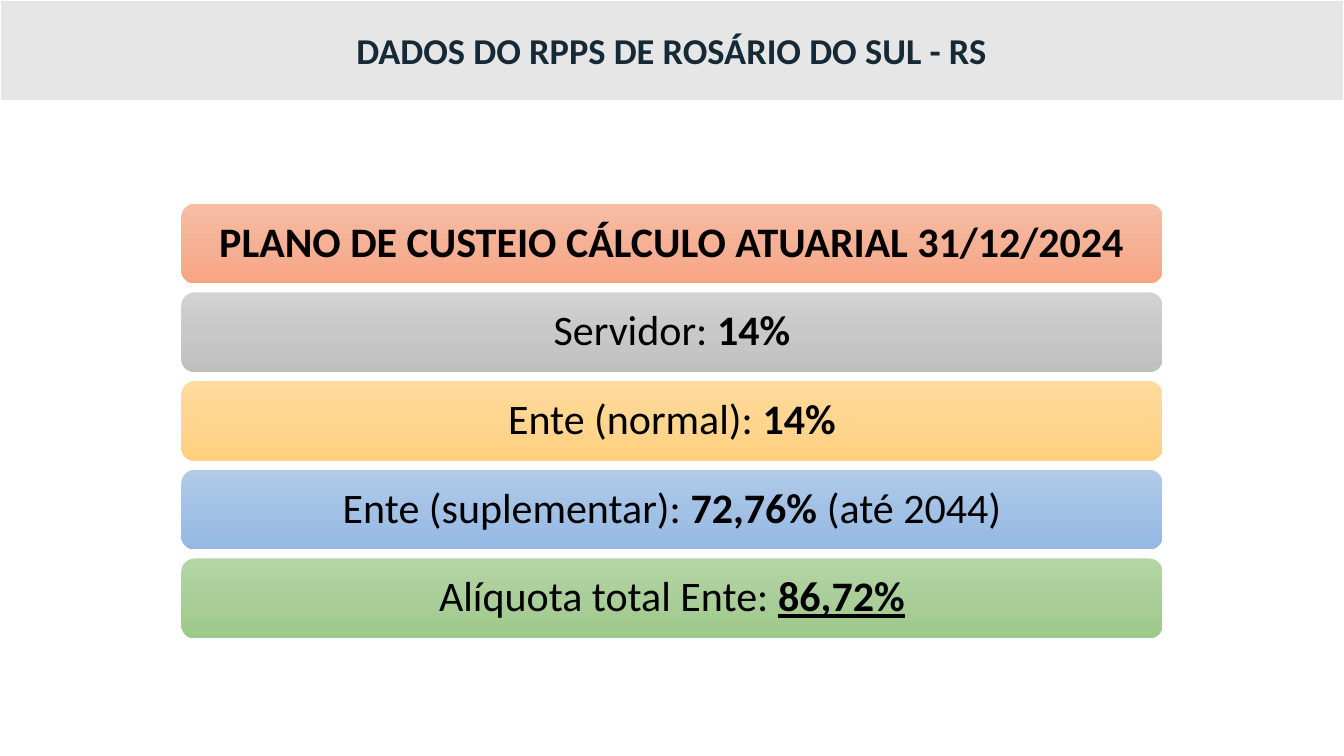
import copy
from dataclasses import dataclass

import pptx
import pptx.dml.color
import pptx.enum.shapes
import pptx.enum.text
import pptx.oxml.ns
import pptx.util


@dataclass(frozen=True)
class Theme:
    font: str = "Calibri"
    head_size: int = 26
    bar_size: int = 30
    head_ink: str = "162937"
    ink: str = "000000"
    band: str = "E7E6E6"
    edge: str = "FFFFFF"


@dataclass(frozen=True)
class Run:
    text: str
    bold: bool = False
    under: bool = False


@dataclass(frozen=True)
class Bar:
    runs: tuple[Run, ...]
    stops: tuple[str, str, str]


THEME = Theme()
WIDTH, HEIGHT = 13.33, 7.5
HEAD_H = 1.0
# One column of bars, one bar to a row
LEFT, TOP = 1.8, 2.02
COL_W, BAR_H, ROW_H = WIDTH - 2 * LEFT, 0.79, 0.88
INSET = 0.16

BARS = (
    Bar((Run("PLANO DE CUSTEIO CÁLCULO ATUARIAL 31/12/2024", bold=True),),
        ("F7BDA5", "F5B196", "F8A582")),
    Bar((Run("Servidor: "), Run("14%", bold=True)),
        ("D2D2D2", "C8C8C8", "C0C0C0")),
    Bar((Run("Ente (normal): "), Run("14%", bold=True)),
        ("FFDB9E", "FFD590", "FFD07C")),
    Bar((Run("Ente (suplementar): "), Run("72,76%", bold=True), Run(" (até 2044)")),
        ("B1CBE9", "A3C1E5", "93B9E4")),
    Bar((Run("Alíquota total Ente: "), Run("86,72%", bold=True, under=True)),
        ("B5D5A7", "AACE9A", "9CC987")),
)


def rgb(code: str) -> pptx.dml.color.RGBColor:
    return pptx.dml.color.RGBColor.from_string(code)


def write(shape, runs: tuple[Run, ...], *, size: int, ink: str,
          space: float = 1.0, inset: float = 0.1) -> None:
    frame = shape.text_frame
    frame.word_wrap = True
    frame.auto_size = pptx.enum.text.MSO_AUTO_SIZE.NONE
    frame.vertical_anchor = pptx.enum.text.MSO_ANCHOR.MIDDLE
    frame.margin_left = frame.margin_right = pptx.util.Inches(inset)
    para = frame.paragraphs[0]
    para.alignment = pptx.enum.text.PP_ALIGN.CENTER
    para.line_spacing = space
    for item in runs:
        run = para.add_run()
        run.text = item.text
        font = run.font
        font.name, font.size = THEME.font, pptx.util.Pt(size)
        font.bold, font.underline = item.bold, item.under
        font.color.rgb = rgb(ink)


def shade(shape, codes: tuple[str, ...]) -> None:
    """Fill from top to bottom with evenly spaced colours."""
    fill = shape.fill
    fill.gradient()
    fill.gradient_angle = 270
    stops = shape.element.spPr.find(".//" + pptx.oxml.ns.qn("a:gsLst"))
    while len(stops) < len(codes):
        stops.append(copy.deepcopy(stops[0]))
    for i, (stop, code) in enumerate(zip(fill.gradient_stops, codes)):
        stop.position = i / (len(codes) - 1)
        stop.color.rgb = rgb(code)


def draw_head(slide) -> None:
    head = slide.shapes.title
    head.left = head.top = 0
    head.width, head.height = pptx.util.Inches(WIDTH), pptx.util.Inches(HEAD_H)
    head.fill.solid()
    head.fill.fore_color.rgb = rgb(THEME.band)
    head.line.color.rgb = rgb(THEME.edge)
    head.line.width = pptx.util.Pt(1)
    write(head, (Run("DADOS DO RPPS DE ROSÁRIO DO SUL - RS", bold=True),),
          size=THEME.head_size, ink=THEME.head_ink)


def draw_bar(slide, bar: Bar, row: int) -> None:
    box = (LEFT, TOP + row * ROW_H, COL_W, BAR_H)
    shape = slide.shapes.add_shape(
        pptx.enum.shapes.MSO_SHAPE.ROUNDED_RECTANGLE,
        *(pptx.util.Inches(side) for side in box))
    shape.shadow.inherit = False
    shape.line.fill.background()
    shade(shape, bar.stops)
    write(shape, bar.runs, size=THEME.bar_size, ink=THEME.ink,
          space=0.9, inset=INSET)


def main() -> None:
    deck = pptx.Presentation()
    deck.slide_width = pptx.util.Inches(WIDTH)
    deck.slide_height = pptx.util.Inches(HEIGHT)
    slide = deck.slides.add_slide(deck.slide_layouts.get_by_name("Title Only"))
    draw_head(slide)
    for row, bar in enumerate(BARS):
        draw_bar(slide, bar, row)
    deck.save("out.pptx")


if __name__ == "__main__":
    main()
